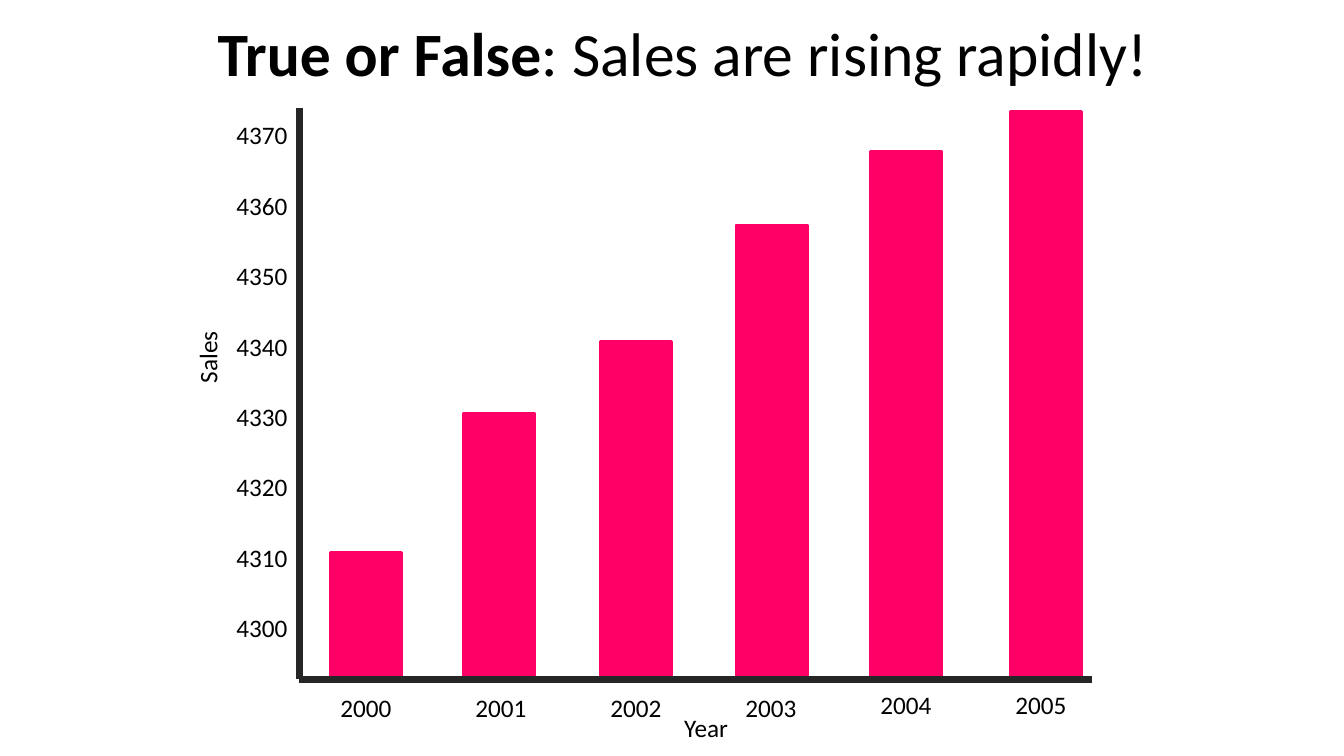
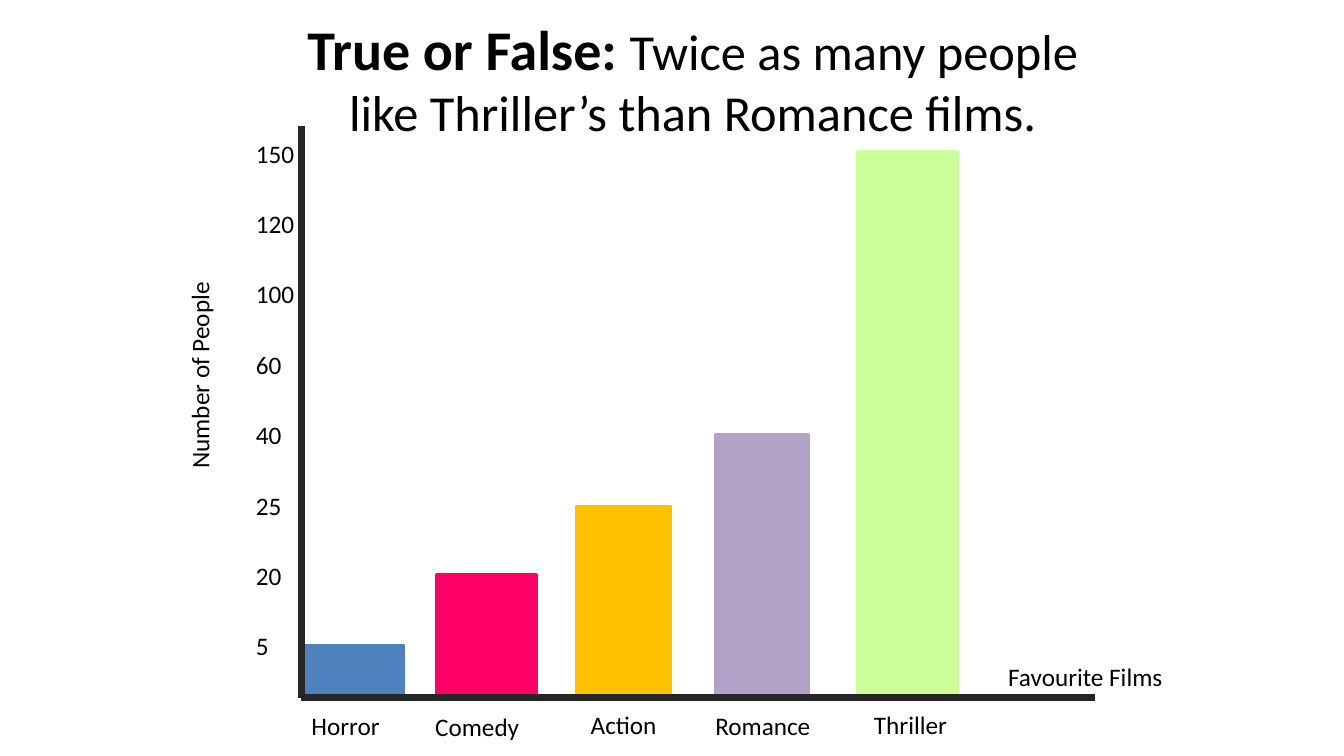
"""Build two true-or-false slides with hand-drawn bar charts."""
import dataclasses

import lxml.etree
import pptx
import pptx.dml.color
import pptx.enum.shapes
import pptx.enum.text
import pptx.oxml.ns
import pptx.util


def rgb(code):
    """Return a colour from its hex code."""
    return pptx.dml.color.RGBColor.from_string(code)


@dataclasses.dataclass(frozen=True)
class Theme:
    """Hold the fonts, sizes and colours that the slides share."""
    font: str = "Calibri"
    label: int = 18
    title: int = 44
    title_lead: int = 40
    title_rest: int = 36
    bar_line: int = 2
    axis_line: float = 4.5
    text: str = "000000"
    axis: str = "262626"
    pink: str = "FF0066"
    blue: str = "4F81BD"
    amber: str = "FFC000"
    lilac: str = "B3A2C7"
    lime: str = "CCFF99"


@dataclasses.dataclass(frozen=True)
class Box:
    """Describe a region that is split into 100 columns and 100 rows."""
    left: float
    top: float
    width: float
    height: float

    def cell(self, col, row, cols, rows):
        """Return the box that covers the given columns and rows."""
        return Box(self.left + self.width * col / 100, self.top + self.height * row / 100,
                   self.width * cols / 100, self.height * rows / 100)

    def place(self):
        """Return left, top, width and height as lengths."""
        return [pptx.util.Inches(v) for v in (self.left, self.top, self.width, self.height)]


THEME = Theme()
SLIDE = Box(0, 0, 13.33, 7.5)
LABEL_ROWS = 7.1
TICK_ROW, TICK_STEP = 1.2, 12.32


def apply(obj, formats):
    """Set each named format value on an object."""
    for name, value in formats.items():
        setattr(obj, name, value)


def set_line(line, color, width):
    """Give a line its colour and width in points."""
    line.fill.solid()
    apply(line.fill.fore_color, {"rgb": rgb(color)})
    apply(line, {"width": pptx.util.Pt(width)})


def add_text(s, box, runs, wrap=False, align=None, rotation=0):
    """Add a text box of (text, size, bold) runs."""
    sp = s.shapes.add_textbox(*box.place())
    apply(sp, {"rotation": rotation})
    tf = sp.text_frame
    apply(tf, {"word_wrap": wrap,
               "auto_size": pptx.enum.text.MSO_AUTO_SIZE.SHAPE_TO_FIT_TEXT})
    p = tf.paragraphs[0]
    apply(p, {"alignment": align})
    for text, size, bold in runs:
        r = p.add_run()
        r.text = text
        apply(r.font, {"name": THEME.font, "size": pptx.util.Pt(size), "bold": bold})
        apply(r.font.color, {"rgb": rgb(THEME.text)})


def add_label(s, box, text, col, row, cols, rotation=0):
    """Add a chart label at a column and row of the plot box."""
    add_text(s, box.cell(col, row, cols, LABEL_ROWS), [(text, THEME.label, None)],
             rotation=rotation)


def add_bars(s, box, bars, base):
    """Add bars of (left, top, width, colour) that stand on the base row."""
    for col, row, cols, color in bars:
        sp = s.shapes.add_shape(pptx.enum.shapes.MSO_SHAPE.RECTANGLE,
                                *box.cell(col, row, cols, base - row).place())
        apply(sp.shadow, {"inherit": False})
        sp.fill.solid()
        apply(sp.fill.fore_color, {"rgb": rgb(color)})
        set_line(sp.line, color, THEME.bar_line)


def add_axes(s, box):
    """Draw the left and bottom edges of the plot box."""
    left, top, width, height = box.place()
    right, bottom = left + width, top + height
    for start in ((left, top), (right, bottom)):
        sp = s.shapes.add_connector(pptx.enum.shapes.MSO_CONNECTOR.STRAIGHT,
                                    *start, left, bottom)
        set_line(sp.line, THEME.axis, THEME.axis_line)
        lxml.etree.SubElement(sp._element.spPr, pptx.oxml.ns.qn("a:effectLst"))


def add_ticks(s, box, values, col):
    """Add evenly spaced values, listed from the top, beside the left axis."""
    for i, value in enumerate(values):
        add_label(s, box, str(value), col, TICK_ROW + TICK_STEP * i,
                  2.6 + 1.6 * len(str(value)))


def add_bar_chart(s, box, bars, base, ticks, tick_col, labels):
    """Build a bar chart with its axes, values and labels in the plot box."""
    add_bars(s, box, bars, base)
    add_axes(s, box)
    add_ticks(s, box, ticks, tick_col)
    for label in labels:
        add_label(s, box, *label)


def sales_slide(s, box):
    """Build the slide on sales by year."""
    bars = [(col, row, 9, THEME.pink) for col, row in (
        (3.9, 77.8), (20.7, 53.4), (38, 40.9), (55.1, 20.5), (72.1, 7.6), (89.7, 0.7))]
    years = [(str(2000 + i), 3.9 + 17.04 * i, 101.4 if i < 4 else 100.9, 9)
             for i in range(6)]
    titles = [("Year", 47.3, 104.9, 8.1), ("Sales", -16.2, 40, 9.2, 270)]
    add_bar_chart(s, box.cell(22.28, 14.27, 58.96, 75.6), bars, 99.3,
                  range(4370, 4290, -10), -9.2, years + titles)
    add_text(s, box.cell(15.45, 1.3, 71.4, 11.2),
             [("True or False", THEME.title, True),
              (": Sales are rising rapidly!", THEME.title, False)])


def films_slide(s, box):
    """Build the slide on favourite films."""
    bars = [(0.1, 90.8, 12.8, THEME.blue), (17, 78.5, 12.6, THEME.pink),
            (34.7, 66.5, 11.8, THEME.amber), (52.2, 54, 11.7, THEME.lilac),
            (70.1, 4.4, 12.6, THEME.lime)]
    genres = [("Horror", 0, 101.4, 11.3), ("Comedy", 15.6, 101.6, 13.4),
              ("Action", 35.2, 101.2, 10.9), ("Romance", 50.9, 101.4, 14.8),
              ("Thriller", 70.9, 101.2, 11.8)]
    titles = [("Favourite Films", 87.8, 92.8, 22.3),
              ("Number of People", -26, 39.9, 26.3, 270)]
    add_bar_chart(s, box.cell(22.43, 16.67, 59.04, 75.6), bars, 99.8,
                  (150, 120, 100, 60, 40, 25, 20, 5), -7, genres + titles)
    add_text(s, box.cell(19.35, 1.2, 64.4, 18.4),
             [("True or False: ", THEME.title_lead, True),
              ("Twice as many people like Thriller’s than Romance films.",
               THEME.title_rest, False)],
             wrap=True, align=pptx.enum.text.PP_ALIGN.CENTER)


def main():
    """Build and save the presentation."""
    prs = pptx.Presentation()
    apply(prs, {"slide_width": pptx.util.Inches(SLIDE.width),
                "slide_height": pptx.util.Inches(SLIDE.height)})
    for build in (sales_slide, films_slide):
        build(prs.slides.add_slide(prs.slide_layouts[6]), SLIDE)
    prs.save("out.pptx")


if __name__ == "__main__":
    main()
